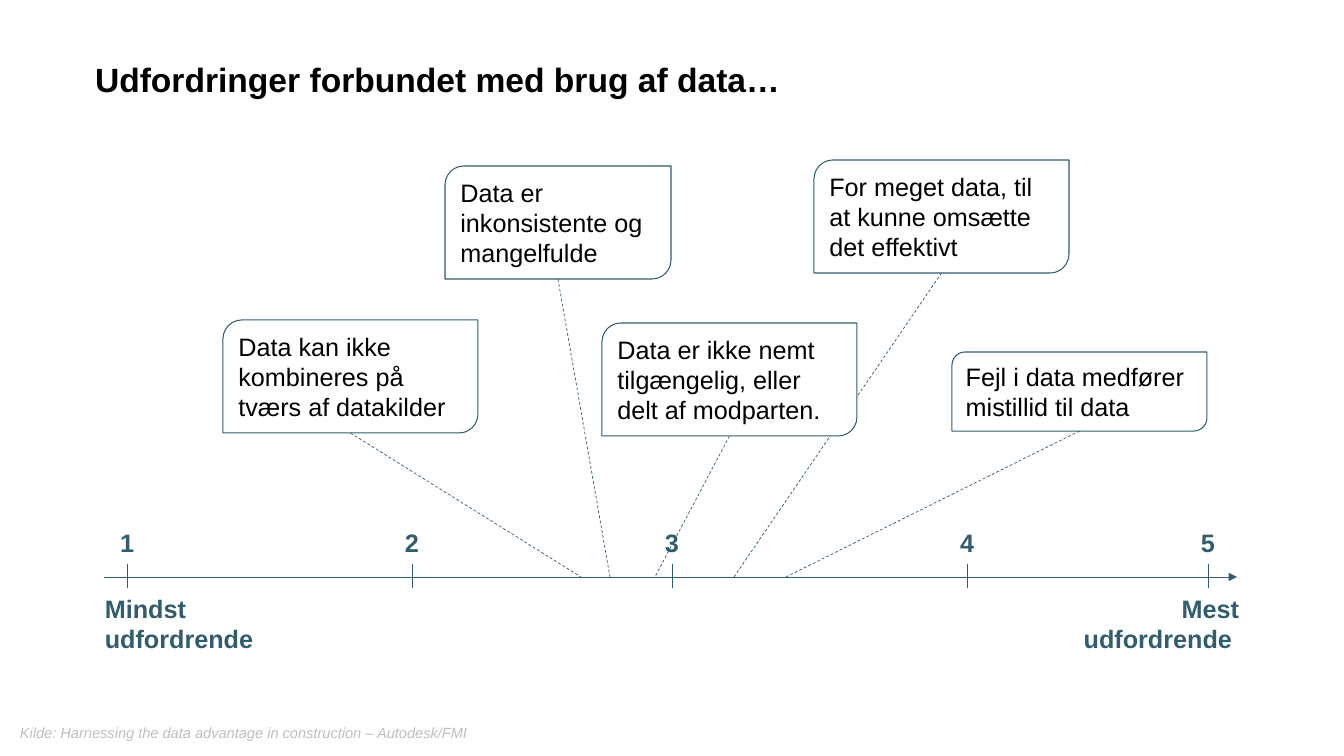
from lxml import etree
from pptx import Presentation
from pptx.dml.color import RGBColor
from pptx.enum.dml import MSO_LINE
from pptx.enum.shapes import MSO_CONNECTOR, MSO_SHAPE
from pptx.enum.text import MSO_ANCHOR, MSO_AUTO_SIZE, PP_ALIGN
from pptx.oxml.ns import qn
from pptx.util import Pt

EMU_PER_PX = 914400 / 100.8
LEFT, CENTER, RIGHT = PP_ALIGN.LEFT, PP_ALIGN.CENTER, PP_ALIGN.RIGHT
TOP, MIDDLE = MSO_ANCHOR.TOP, MSO_ANCHOR.MIDDLE
GROW, FIXED = MSO_AUTO_SIZE.SHAPE_TO_FIT_TEXT, MSO_AUTO_SIZE.NONE
STRAIGHT = MSO_CONNECTOR.STRAIGHT
CARD = MSO_SHAPE.ROUND_2_DIAG_RECTANGLE
DASH = MSO_LINE.DASH

COLORS = {"teal": "315D6D", "text": "000000", "source": "BFBFBF", "card": "FFFFFF"}
AXIS_Y = 577
TICKS = {"1": 127, "2": 412, "3": 672, "4": 967, "5": 1208}

# Text, box (left, top, width, height), leader's x on the axis, opaque
CHALLENGES = [
    ("Fejl i data medfører mistillid til data", (952, 352, 255, 79), 786, False),
    ("For meget data, til at kunne omsætte det effektivt", (814, 160, 255, 113), 734, False),
    ("Data er inkonsistente og mangelfulde", (445, 166, 226, 113), 610, False),
    ("Data kan ikke kombineres på tværs af datakilder", (223, 320, 255, 113), 581, False),
    ("Data er ikke nemt tilgængelig, eller delt af modparten.", (602, 323, 255, 113), 655, True),
]


def px(*lengths):
    return [round(length * EMU_PER_PX) for length in lengths]


def color(name):
    return RGBColor.from_string(COLORS[name])


def write(shape, text, color_name="text", align=LEFT, anchor=TOP, autosize=GROW, **font):
    frame = shape.text_frame
    frame.text = text
    frame_format = {"word_wrap": True, "auto_size": autosize, "vertical_anchor": anchor}
    for key, value in frame_format.items():
        setattr(frame, key, value)
    paragraph = frame.paragraphs[0]
    paragraph.alignment = align
    run_font = paragraph.runs[0].font
    for key, value in {"name": "Arial", "size": Pt(18), **font}.items():
        setattr(run_font, key, value)
    run_font.color.rgb = color(color_name)


def add_label(slide, box, text, color_name="teal", **text_format):
    write(slide.shapes.add_textbox(*px(*box)), text, color_name, **text_format)


def add_line(slide, start, end, dash=None, arrow=False):
    connector = slide.shapes.add_connector(STRAIGHT, *px(*start, *end))
    connector.line.color.rgb = color("teal")
    connector.line.width = Pt(0.5)
    if dash:
        connector.line.dash_style = dash
    properties = connector.line._get_or_add_ln()
    if arrow:
        etree.SubElement(properties, qn("a:tailEnd"), type="triangle")
    etree.SubElement(properties.getparent(), qn("a:effectLst"))


def add_title(slide, box):
    title = slide.shapes.title
    title.left, title.top, title.width, title.height = px(*box)
    title.text_frame.margin_left = title.text_frame.margin_right = 0
    write(title, "Udfordringer forbundet med brug af data…",
          autosize=FIXED, size=Pt(24), bold=True)


def add_scale(slide, left, right):
    add_line(slide, (left, AXIS_Y), (right, AXIS_Y), arrow=True)
    for number, x in TICKS.items():
        add_line(slide, (x, AXIS_Y + 11), (x, AXIS_Y - 13))
        add_label(slide, (x - 32, AXIS_Y - 55, 64, 40), number, align=CENTER, bold=True)
    end_width = 195
    add_label(slide, (left - 9, AXIS_Y + 11, end_width, 72), "Mindst udfordrende", bold=True)
    add_label(slide, (right + 12 - end_width, AXIS_Y + 11, end_width, 72),
              "Mest udfordrende ", align=RIGHT, bold=True)


def add_challenge(slide, text, box, foot_x, opaque):
    """Card with a dashed leader from its bottom down to the axis."""
    left, top, width, height = box
    add_line(slide, (left + width / 2, top + height), (foot_x, AXIS_Y), dash=DASH)
    card = slide.shapes.add_shape(CARD, *px(*box))
    card.shadow.inherit = False
    if opaque:
        card.fill.solid()
        card.fill.fore_color.rgb = color("card")
    else:
        card.fill.background()
    card.line.color.rgb = color("teal")
    card.line.width = Pt(0.75)
    write(card, text, anchor=MIDDLE)


def main():
    presentation = Presentation()
    presentation.slide_width, presentation.slide_height = px(1344, 756)
    slide = presentation.slides.add_slide(presentation.slide_layouts[5])
    add_title(slide, (95, 54, 1036, 120))
    add_scale(slide, 104, 1237)
    for challenge in CHALLENGES:
        add_challenge(slide, *challenge)
    add_label(slide, (10, 719, 628, 29),
              "Kilde: Harnessing the data advantage in construction – Autodesk/FMI",
              "source", size=Pt(10.5), italic=True)
    presentation.save("out.pptx")


if __name__ == "__main__":
    main()
